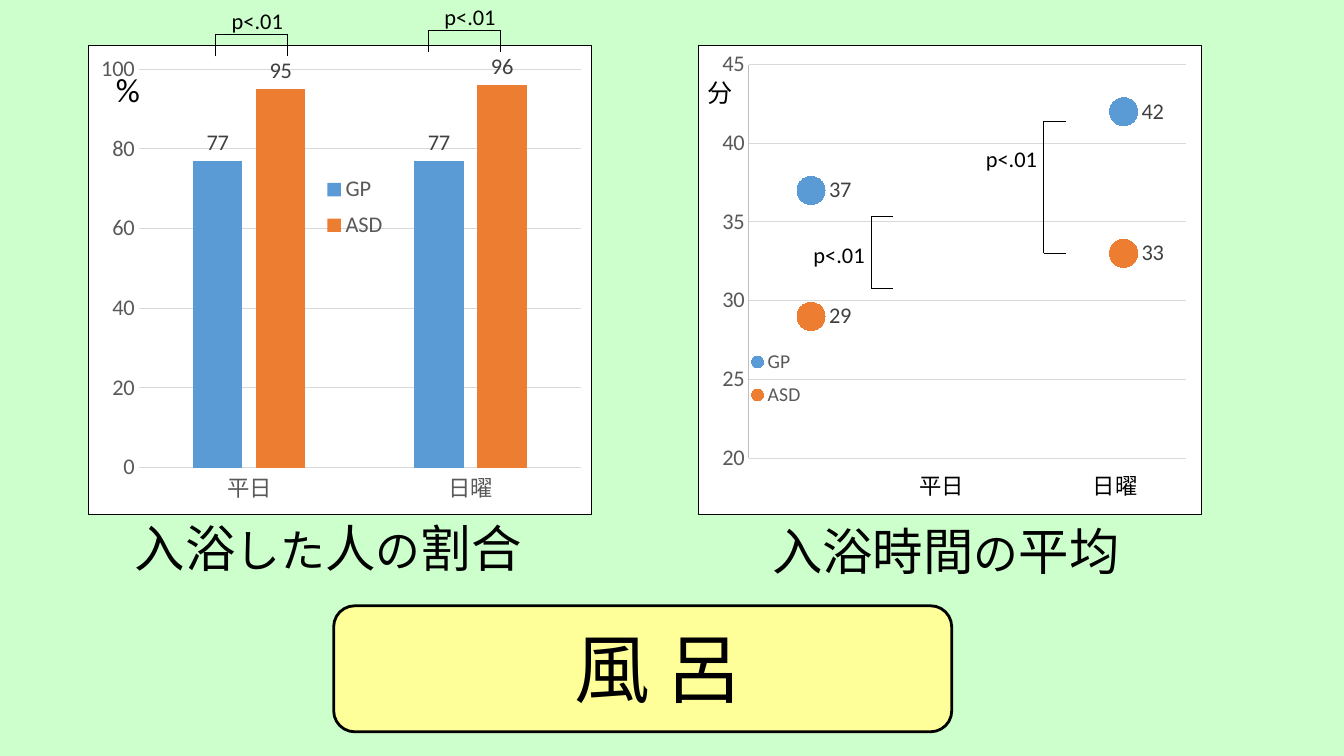
from lxml import etree
from pptx import Presentation
from pptx.chart.data import CategoryChartData, XyChartData
from pptx.dml.color import RGBColor
from pptx.enum.chart import (XL_CHART_TYPE, XL_LABEL_POSITION, XL_LEGEND_POSITION,
                             XL_MARKER_STYLE, XL_TICK_MARK)
from pptx.enum.shapes import MSO_CONNECTOR, MSO_SHAPE
from pptx.enum.text import MSO_ANCHOR, PP_ALIGN
from pptx.oxml import parse_xml
from pptx.oxml.ns import nsdecls, qn
from pptx.util import Inches, Pt

COLUMNS = XL_CHART_TYPE.COLUMN_CLUSTERED
SCATTER = XL_CHART_TYPE.XY_SCATTER
LABEL_ABOVE = XL_LABEL_POSITION.OUTSIDE_END
LABEL_RIGHT = XL_LABEL_POSITION.RIGHT
LEGEND_BOTTOM = XL_LEGEND_POSITION.BOTTOM
CIRCLE = XL_MARKER_STYLE.CIRCLE
NO_TICK = XL_TICK_MARK.NONE
STRAIGHT = MSO_CONNECTOR.STRAIGHT
ROUNDED = MSO_SHAPE.ROUNDED_RECTANGLE
TOP, BOTTOM = MSO_ANCHOR.TOP, MSO_ANCHOR.BOTTOM
LEFT, CENTER = PP_ALIGN.LEFT, PP_ALIGN.CENTER

BLACK = RGBColor(0, 0, 0)
MINT = RGBColor(0xCC, 0xFF, 0xCC)
YELLOW = RGBColor(0xFF, 0xFF, 0x99)
AXIS_GREY = RGBColor(0x59, 0x59, 0x59)
LABEL_GREY = RGBColor(0x40, 0x40, 0x40)
LINE_GREY = RGBColor(0xBF, 0xBF, 0xBF)
GRID_GREY = RGBColor(0xD9, 0xD9, 0xD9)
BLUE = RGBColor(0x5B, 0x9B, 0xD5)
ORANGE = RGBColor(0xED, 0x7D, 0x31)

BODY_FONT, TITLE_FONT = "Calibri", "Noto Sans CJK JP"
DAYS = ("平日", "日曜")
PANEL_WIDTH, PANEL_HEIGHT, PANEL_TOP = 5, 4.66, 0.45
ARM = 0.22


def style_font(font, size, color, name=BODY_FONT):
    font.size, font.name = Pt(size), name
    font.color.rgb = color


def add_text(page, box, spans, size, anchor=BOTTOM, align=LEFT, spacing=0.9, name=BODY_FONT):
    shape = page.shapes.add_textbox(*map(Inches, box))
    frame = shape.text_frame
    frame.word_wrap, frame.vertical_anchor = True, anchor
    para = frame.paragraphs[0]
    para.alignment, para.line_spacing = align, spacing
    style_font(para.font, size, BLACK, name)
    for words, span_size in spans:
        span = para.add_run()
        span.text = words
        if span_size != size:
            span.font.size = Pt(span_size)


def add_label(page, left, top, words, size, height=0.77):
    add_text(page, (left, top, 0.66, height), [(words, size)], size)


def add_bracket(page, points, label_left, label_top):
    add_text(page, (label_left, label_top, 0.83, 0.37), [("p<.01", 16)], 16, TOP, spacing=1.0)
    group = page.shapes.add_group_shape()
    for start, end in zip(points, points[1:]):
        line = group.shapes.add_connector(STRAIGHT, *map(Inches, start + end))
        line.line.color.rgb, line.line.width = BLACK, Pt(0.5)
        etree.SubElement(line.element.spPr, qn("a:effectLst"))


def add_top_bracket(page, left, top):
    right, foot = left + 0.71, top + ARM
    points = [(left, foot), (left, top), (right, top), (right, foot)]
    add_bracket(page, points, left + 0.06, top - 0.32)


def add_side_bracket(page, left, top, height):
    tip, foot = left + ARM, top + height
    points = [(tip, top), (left, top), (left, foot), (tip, foot)]
    add_bracket(page, points, left - 0.67, top + 0.19)


def make_layout(shares, inner=False):
    target = '<c:layoutTarget val="inner"/>' if inner else ""
    places = "".join(f'<c:{key} val="{share}"/>' for key, share in zip("xywh", shares))
    modes = '<c:xMode val="edge"/><c:yMode val="edge"/>'
    return parse_xml(f'<c:layout {nsdecls("c")}><c:manualLayout>{target}{modes}{places}'
                     '</c:manualLayout></c:layout>')


def add_panel_chart(page, left, kind, data, plot_shares, legend_shares, legend_size, label_place):
    box = map(Inches, (left, PANEL_TOP, PANEL_WIDTH, PANEL_HEIGHT))
    chart = page.shapes.add_chart(kind, *box, data).chart
    chart.has_title = False
    style_font(chart.font, 10, BLACK)
    chart.has_legend = True
    chart.legend.position, chart.legend.include_in_layout = LEGEND_BOTTOM, True
    style_font(chart.legend.font, legend_size, AXIS_GREY)

    root = chart.element
    for layout in root.xpath("c:chart/c:plotArea/c:layout | c:chart/c:legend/c:layout"):
        layout.getparent().remove(layout)
    root.xpath("c:chart/c:plotArea")[0].insert(0, make_layout(plot_shares, True))
    root.xpath("c:chart/c:legend/c:legendPos")[0].addnext(make_layout(legend_shares))
    root.find(qn("c:chart")).addnext(parse_xml(
        f'<c:spPr {nsdecls("c", "a")}><a:solidFill><a:srgbClr val="FFFFFF"/></a:solidFill>'
        '<a:ln w="9525"><a:solidFill><a:srgbClr val="000000"/></a:solidFill></a:ln></c:spPr>'))

    axis = chart.value_axis
    axis.major_tick_mark = axis.minor_tick_mark = NO_TICK
    style_font(axis.tick_labels.font, 16, AXIS_GREY)
    grid = axis.major_gridlines.format.line
    grid.color.rgb, grid.width = GRID_GREY, Pt(0.75)
    for series in chart.plots[0].series:
        for number in range(len(DAYS)):
            label = series.points[number].data_label
            style_font(label.font, 16, LABEL_GREY)
            label.position = label_place
    return chart


def add_share_panel(page, left):
    data = CategoryChartData()
    data.categories = DAYS
    data.add_series("GP", (77, 77))
    data.add_series("ASD", (95, 96))
    chart = add_panel_chart(page, left, COLUMNS, data, (0.1, 0.05, 0.88, 0.85),
                            (0.46, 0.26, 0.14, 0.17), 16, LABEL_ABOVE)
    plot = chart.plots[0]
    plot.gap_width, plot.overlap, plot.vary_by_categories = 219, -27, False
    for series, color in zip(plot.series, (BLUE, ORANGE)):
        series.format.fill.solid()
        series.format.fill.fore_color.rgb = color
    values, days = chart.value_axis, chart.category_axis
    values.minimum_scale, values.maximum_scale, values.major_unit = 0, 100, 20
    values.format.line.fill.background()
    days.major_tick_mark = NO_TICK
    days.format.line.color.rgb, days.format.line.width = GRID_GREY, Pt(0.75)
    style_font(days.tick_labels.font, 16, AXIS_GREY)

    add_label(page, left + 0.18, PANEL_TOP - 0.08, "%", 24)
    caption = [("入浴", 36), ("した", 32), ("人", 36), ("の", 32), ("割合", 36)]
    add_text(page, (left + 0.37, 5.02, 5.24, 0.77), caption, 36)
    add_top_bracket(page, left + 1.27, 0.34)
    add_top_bracket(page, left + 3.38, 0.3)


def add_time_panel(page, left):
    data = XyChartData()
    for name, minutes in (("GP", (37, 42)), ("ASD", (29, 33))):
        series = data.add_series(name)
        for day, value in enumerate(minutes, 1):
            series.add_data_point(day, value)
    chart = add_panel_chart(page, left, SCATTER, data, (0.1, 0.04, 0.87, 0.84),
                            (0.09, 0.63, 0.13, 0.16), 14, LABEL_RIGHT)
    plot = chart.plots[0]
    plot.vary_by_categories = False
    for series, color in zip(plot.series, (BLUE, ORANGE)):
        series.format.line.fill.background()
        marker = series.marker
        marker.style, marker.size = CIRCLE, 20
        marker.format.fill.solid()
        marker.format.fill.fore_color.rgb = color
        marker.format.line.color.rgb = color
    values, days = chart.value_axis, chart.category_axis
    values.minimum_scale, values.maximum_scale, values.major_unit = 20, 45, 5
    values.format.line.color.rgb, values.format.line.width = LINE_GREY, Pt(0.75)
    days.minimum_scale, days.maximum_scale = 0.8, 2.2
    days.has_major_gridlines = days.visible = False

    add_label(page, left, PANEL_TOP - 0.1, "分", 18)
    for day, offset in zip(DAYS, (2.1, 3.82)):
        add_label(page, left + offset, 4.61, day, 16, 0.39)
    caption = [("入浴時間", 36), ("の", 32), ("平均", 36)]
    add_text(page, (left + 0.64, 5.05, 4.34, 0.77), caption, 36)
    add_side_bracket(page, left + 1.72, 2.15, 0.71)
    add_side_bracket(page, left + 3.43, 1.2, 1.31)


def add_title(page, left, top):
    banner = page.shapes.add_shape(ROUNDED, *map(Inches, (left, top, 6.13, 1.25)))
    banner.shadow.inherit = False
    banner.fill.solid()
    banner.fill.fore_color.rgb = YELLOW
    banner.line.color.rgb, banner.line.width = BLACK, Pt(2)
    add_text(page, (left + 0.54, top - 0.13, 5.36, 1.25), [("風 呂", 54)], 54,
             align=CENTER, name=TITLE_FONT)


def main():
    deck = Presentation()
    deck.slide_width, deck.slide_height = Inches(13.33), Inches(7.5)
    page = deck.slides.add_slide(deck.slide_layouts[6])
    page.background.fill.solid()
    page.background.fill.fore_color.rgb = MINT
    add_title(page, 3.31, 6.01)
    add_share_panel(page, 0.87)
    add_time_panel(page, 6.92)
    deck.save("out.pptx")


if __name__ == "__main__":
    main()
